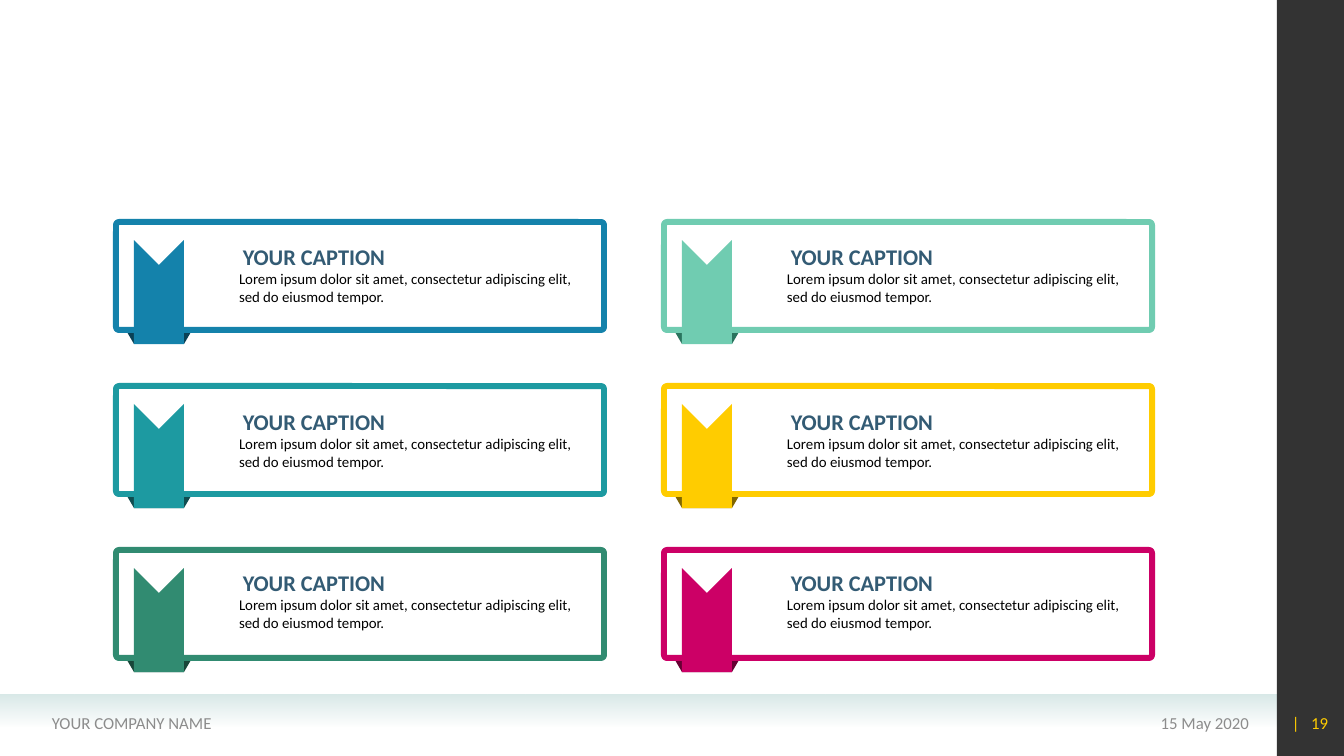
from lxml import etree
from pptx import Presentation
from pptx.dml.color import RGBColor
from pptx.enum.shapes import MSO_SHAPE
from pptx.enum.text import MSO_ANCHOR, MSO_AUTO_SIZE, PP_ALIGN
from pptx.oxml.ns import qn
from pptx.util import Emu, Pt

RECTANGLE, ROUNDED = MSO_SHAPE.RECTANGLE, MSO_SHAPE.ROUNDED_RECTANGLE
TOP, MIDDLE = MSO_ANCHOR.TOP, MSO_ANCHOR.MIDDLE
LEFT, RIGHT = PP_ALIGN.LEFT, PP_ALIGN.RIGHT
GROW = MSO_AUTO_SIZE.SHAPE_TO_FIT_TEXT

# Content
CAPTION = "YOUR CAPTION"
BODY = "Lorem ipsum dolor sit amet, consectetur adipiscing elit, sed do eiusmod tempor."
COMPANY, DATE = "YOUR COMPANY NAME", "15 May 2020"
PAGE_NUMBER = [("|", 0), (" ", 5.4), ("19", 0)]  # text, extra letter spacing in pt
CARDS = [  # rows of (ribbon colour, fold colour)
    [("blue", "blue fold"), ("mint", "mint fold")],
    [("teal", "teal fold"), ("yellow", "yellow fold")],
    [("green", "green fold"), ("pink", "pink fold")],
]
COLORS = {
    "blue": "1482AB", "blue fold": "0A4156", "mint": "70CCB1", "mint fold": "2A745E",
    "teal": "1D9AA1", "teal fold": "0F4D50", "yellow": "FFCC00", "yellow fold": "806600",
    "green": "318B71", "green fold": "184639", "pink": "CC0066", "pink fold": "660033",
    "white": "FFFFFF", "black": "000000", "grey": "8C8C8C", "caption": "335B74",
    "footer": "D9E9E8",
}

# Layout in px
PAGE_WIDTH, PAGE_HEIGHT = 1344, 756
SCALE = 12192000 / PAGE_WIDTH
CARD_LEFT, CARD_TOP, CARD_WIDTH, CARD_HEIGHT = 113, 219, 494, 114
COLUMN_STEP, ROW_STEP = 548, 164
CAPTION_TOPS = [238, 403, 564]
BORDER = 6
RIBBON = [(71, 21), (46, 46), (21, 21), (21, 125), (71, 125)]
FOLD = [(21, 125), (7, 101), (85, 101), (71, 125)]
SIDEBAR_LEFT = 1277
FOOTER_TOP, FOOTER_HEIGHT = 703, 40


def px(*lengths):
    return [Emu(round(length * SCALE)) for length in lengths]


def color(name):
    return RGBColor.from_string(COLORS[name])


def paint(shape, fill, line=None):
    shape.shadow.inherit = False
    shape.fill.solid()
    shape.fill.fore_color.rgb = color(fill)
    if line:
        shape.line.color.rgb = color(line)
        shape.line.width = px(BORDER)[0]
    else:
        shape.line.fill.background()


def set_alpha(color_node, percent):
    etree.SubElement(color_node, qn("a:alpha")).set("val", str(percent * 1000))


def add_outline(page, points, left, top, fill):
    points = [px(left + x, top + y) for x, y in points]
    builder = page.shapes.build_freeform(*points[0])
    builder.add_line_segments(points[1:], close=True)
    paint(builder.convert_to_shape(), fill)


def add_text(page, text, area, *, size=12, ink="grey", bold=False, align=LEFT,
             anchor=MIDDLE, wrap=True, grow=False, insets=None):
    box = page.shapes.add_textbox(*px(*area))
    frame = box.text_frame
    frame.word_wrap = wrap
    frame.vertical_anchor = anchor
    if grow:
        frame.auto_size = GROW
    if insets:
        frame.margin_left, frame.margin_top = px(*insets)
        frame.margin_right, frame.margin_bottom = px(*insets)
    para = frame.paragraphs[0]
    para.alignment = align
    for words, spacing in [(text, 0)] if isinstance(text, str) else text:
        span = para.add_run()
        span.text = words
        span.font.name, span.font.size = "Calibri", Pt(size)
        span.font.bold = bold
        span.font.color.rgb = color(ink)
        if spacing:
            span.font._element.set("spc", str(round(spacing * 100)))


def add_background(page):
    band = page.shapes.add_shape(RECTANGLE, *px(0, 695, SIDEBAR_LEFT, 32))
    paint(band, "footer")
    band.fill.gradient()
    band.fill.gradient_angle = 270
    for stop, position in zip(band.fill.gradient_stops, (0, 1)):
        stop.color.rgb = color("footer")
        stop.position = position
    set_alpha(list(band._element.iter(qn("a:srgbClr")))[-1], 0)

    sidebar = page.shapes.add_shape(
        RECTANGLE, *px(SIDEBAR_LEFT, 0, PAGE_WIDTH - SIDEBAR_LEFT, PAGE_HEIGHT))
    paint(sidebar, "black")
    set_alpha(next(sidebar._element.iter(qn("a:srgbClr"))), 80)


def add_card(page, left, top, caption_top, ribbon, fold):
    add_outline(page, FOLD, left, top, fold)
    half = BORDER / 2
    frame = page.shapes.add_shape(ROUNDED, *px(
        left + half, top + half, CARD_WIDTH - BORDER, CARD_HEIGHT - BORDER))
    frame.adjustments[0] = half / (CARD_HEIGHT - BORDER)
    paint(frame, "white", line=ribbon)
    add_outline(page, RIBBON, left, top, ribbon)
    add_text(page, BODY, (left + 122, caption_top + 30, 351, 40), size=10.6,
             ink="black", anchor=TOP, grow=True, insets=(4, 2))
    add_text(page, CAPTION, (left + 120, caption_top, 170, 37), size=16,
             ink="caption", bold=True, wrap=False, grow=True)


def main():
    deck = Presentation()
    deck.slide_width, deck.slide_height = px(PAGE_WIDTH, PAGE_HEIGHT)
    page = deck.slides.add_slide(deck.slide_layouts[6])

    # Background and footer
    add_background(page)
    add_text(page, DATE, (917, FOOTER_TOP, 342, FOOTER_HEIGHT), align=RIGHT)
    add_text(page, COMPANY, (42, FOOTER_TOP, 494, FOOTER_HEIGHT))
    add_text(page, PAGE_NUMBER, (1270, FOOTER_TOP, 68, FOOTER_HEIGHT),
             ink="yellow", align=RIGHT)

    # Grid of ribbon cards
    for row, (cards, caption_top) in enumerate(zip(CARDS, CAPTION_TOPS)):
        for column, (ribbon, fold) in enumerate(cards):
            add_card(page, CARD_LEFT + column * COLUMN_STEP,
                     CARD_TOP + row * ROW_STEP, caption_top, ribbon, fold)

    deck.save("out.pptx")


if __name__ == "__main__":
    main()
